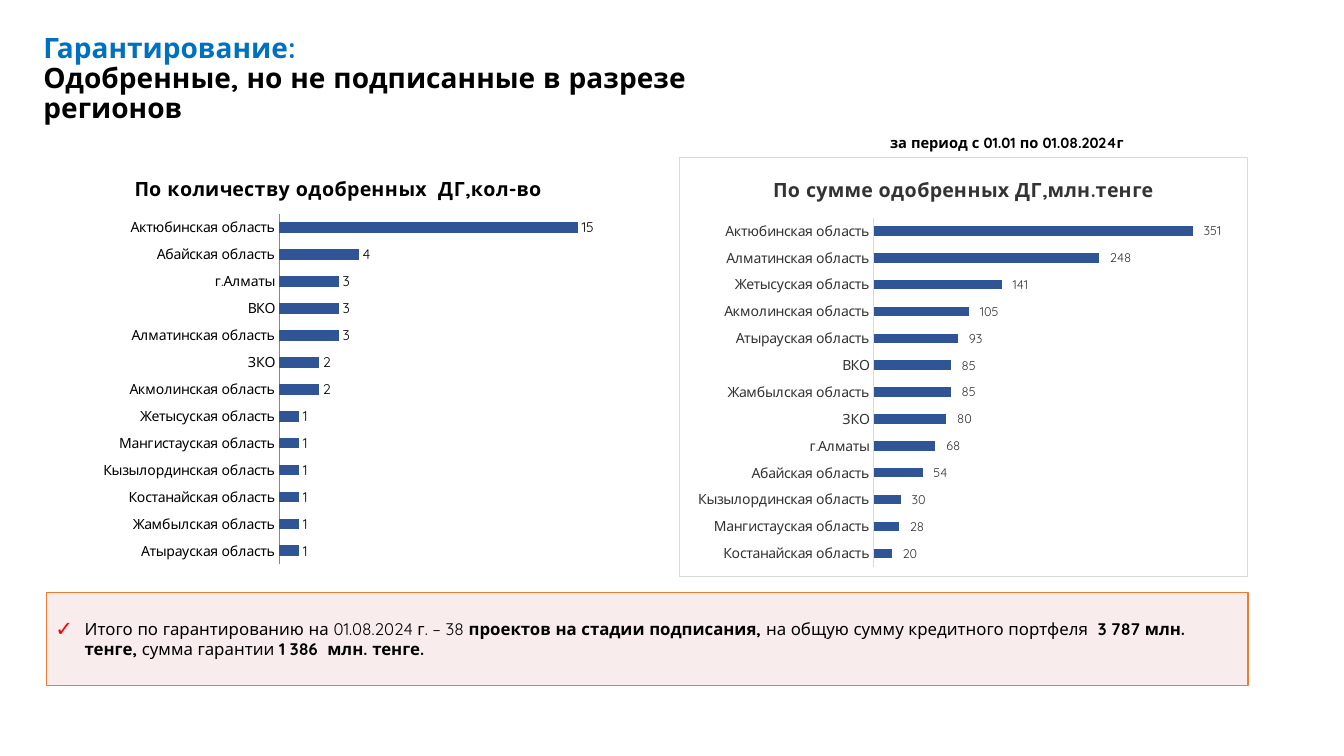
from lxml import etree
from pptx import Presentation
from pptx import util as u
from pptx.chart.data import CategoryChartData
from pptx.dml.color import RGBColor
from pptx.enum import chart as ch, text
from pptx.oxml import parse_xml
from pptx.oxml.ns import nsdecls, qn

WIDTH, HEIGHT = u.Inches(13.33), u.Inches(7.5)
FACE = "Quicksand"
BLACK = RGBColor(0, 0, 0)
BLUE = RGBColor(0x00, 0x70, 0xC0)
BAR = RGBColor(0x2F, 0x55, 0x97)
DARK = RGBColor(0x33, 0x33, 0x33)
GREY = RGBColor(0xD9, 0xD9, 0xD9)
AXIS_GREY = RGBColor(0x87, 0x87, 0x87)
ORANGE = RGBColor(0xED, 0x7D, 0x31)
PINK = RGBColor(0xF2, 0xDC, 0xDB)

REGIONS = {
    "Атырауская область": (1, 93),
    "Жамбылская область": (1, 85),
    "Костанайская область": (1, 20),
    "Кызылординская область": (1, 30),
    "Мангистауская область": (1, 28),
    "Жетысуская область": (1, 141),
    "Акмолинская область": (2, 105),
    "ЗКО": (2, 80),
    "Алматинская область": (3, 248),
    "ВКО": (3, 85),
    "г.Алматы": (3, 68),
    "Абайская область": (4, 54),
    "Актюбинская область": (15, 351),
}

COUNT_CHART = {
    "title": "По количеству одобренных  ДГ,кол-во", "left": 3.98, "measure": 0,
    "ink": BLACK, "axis": AXIS_GREY, "maximum": 16, "gap": 150, "label_size": 10,
    "format": "#,##0", "plot": (0.396, 0.136, 0.559, 0.835), "framed": False,
}
SUM_CHART = {
    "title": "По сумме одобренных ДГ,млн.тенге", "left": 50.49, "measure": 1,
    "ink": DARK, "axis": GREY, "maximum": 400, "gap": 182, "label_size": 9,
    "format": r'_-* #\ ##0_р_._-;\-* #\ ##0_р_._-;_-* "-"??_р_._-;_-@_-',
    "plot": (0.342, 0.143, 0.64, 0.835), "framed": True,
}


def share(left, top, width, height):
    """Turn percentages of the slide into a position and a size."""
    return [int(side * part / 100) for side, part in
            zip((WIDTH, HEIGHT, WIDTH, HEIGHT), (left, top, width, height))]


def place(part, box):
    """Move a placeholder to a box."""
    for name, value in zip(("left", "top", "width", "height"), box):
        setattr(part, name, value)


def set_all(target, **values):
    """Set every attribute given on the target."""
    for name, value in values.items():
        setattr(target, name, value)


def style(font, size, color, bold=False):
    """Set the face, size, weight and colour of a font."""
    set_all(font, name=FACE, size=u.Pt(size), bold=bold)
    font.color.rgb = color


def add_heading(slide):
    """Fill the title placeholder with the section and the topic."""
    heading = slide.shapes.title
    place(heading, share(2.48, 3.87, 59.04, 14.8))
    frame = heading.text_frame
    set_all(frame, word_wrap=True, auto_size=text.MSO_AUTO_SIZE.NONE,
            vertical_anchor=text.MSO_ANCHOR.TOP)
    topic = frame.paragraphs[0]
    set_all(topic, alignment=text.PP_ALIGN.LEFT, line_spacing=0.9, space_before=u.Pt(0))
    for words, color in (("Гарантирование: ", BLUE),
                         ("Одобренные, но не подписанные в разрезе регионов", BLACK)):
        if topic.runs:
            topic.add_line_break()
        run = topic.add_run()
        run.text = words
        style(run.font, 20, color, True)


def add_period(slide):
    """Add the reporting period above the right chart."""
    period = slide.shapes.add_textbox(*share(65.49, 17.07, 19.35, 3.73))
    period.text_frame.word_wrap = False
    run = period.text_frame.paragraphs[0].add_run()
    run.text = "за период с 01.01 по 01.08.2024г"
    style(run.font, 10.5, BLACK, True)


def add_frame(chart):
    """Give the chart area a white fill and a thin border."""
    area = parse_xml(
        f'<c:spPr {nsdecls("c", "a")}><a:solidFill><a:srgbClr val="FFFFFF"/></a:solidFill>'
        f'<a:ln w="9525"><a:solidFill><a:srgbClr val="{GREY}"/></a:solidFill></a:ln></c:spPr>')
    chart.element.find(qn("c:chart")).addnext(area)


def set_plot_area(chart, plot):
    """Fix the inner plot area as shares of the chart."""
    area = chart.element.find(".//" + qn("c:plotArea"))
    for old in area.findall(qn("c:layout")):
        area.remove(old)
    parts = [("layoutTarget", "inner"), ("xMode", "edge"), ("yMode", "edge")]
    parts += zip("xywh", plot)
    inner = "".join(f'<c:{tag} val="{value}"/>' for tag, value in parts)
    area.insert(0, parse_xml(f'<c:layout {nsdecls("c")}><c:manualLayout>{inner}'
                             '</c:manualLayout></c:layout>'))


def add_ranking(slide, look):
    """Add a bar chart of the regions ranked by one measure."""
    measure = look["measure"]
    ranked = sorted(REGIONS, key=lambda region: REGIONS[region][measure])
    data = CategoryChartData()
    data.categories = ranked
    data.add_series(look["title"], [REGIONS[region][measure] for region in ranked])
    chart = slide.shapes.add_chart(ch.XL_CHART_TYPE.BAR_CLUSTERED,
                                   *share(look["left"], 20.8, 42.39, 55.47), data).chart
    style(chart.font, 10, BLACK)
    chart.has_legend = False
    chart.has_title = True
    caption = chart.chart_title.text_frame
    caption.text = look["title"]
    style(caption.paragraphs[0].runs[0].font, 14, look["ink"], True)
    chart.chart_title.include_in_layout = False

    regions_axis, value_axis = chart.category_axis, chart.value_axis
    set_all(regions_axis, major_tick_mark=ch.XL_TICK_MARK.NONE, has_major_gridlines=False)
    style(regions_axis.tick_labels.font, 10, look["ink"])
    regions_axis.format.line.color.rgb = look["axis"]
    regions_axis.format.line.width = u.Pt(0.75)
    set_all(value_axis, visible=False, has_major_gridlines=False,
            minimum_scale=0, maximum_scale=look["maximum"])

    bars = chart.plots[0]
    set_all(bars, gap_width=look["gap"], vary_by_categories=False, has_data_labels=True)
    bars.series[0].format.fill.solid()
    bars.series[0].format.fill.fore_color.rgb = BAR
    set_all(bars.data_labels, show_value=True, number_format=look["format"],
            number_format_is_linked=False, position=ch.XL_LABEL_POSITION.OUTSIDE_END)
    style(bars.data_labels.font, look["label_size"], look["ink"])
    set_plot_area(chart, look["plot"])
    if look["framed"]:
        add_frame(chart)


def add_check_mark(paragraph):
    """Give the paragraph a hanging red check mark."""
    props = paragraph._p.get_or_add_pPr()
    props.set("marL", str(u.Inches(0.3)))
    props.set("indent", str(u.Inches(-0.29)))
    color = etree.SubElement(props, qn("a:buClr"))
    etree.SubElement(color, qn("a:srgbClr"), val="FF0000")
    etree.SubElement(props, qn("a:buSzPct"), val="125000")
    etree.SubElement(props, qn("a:buChar"), char="✓")


def add_summary(slide):
    """Turn the body placeholder into the framed summary."""
    summary = slide.placeholders[1]
    place(summary, share(3.45, 78.4, 89.42, 12.27))
    summary.fill.solid()
    summary.fill.fore_color.rgb = PINK
    tint = summary.fill._xPr.find(".//" + qn("a:srgbClr"))
    etree.SubElement(tint, qn("a:alpha"), val="50000")
    summary.line.color.rgb = ORANGE
    summary.line.width = u.Pt(1)
    frame = summary.text_frame
    set_all(frame, word_wrap=True, auto_size=text.MSO_AUTO_SIZE.NONE,
            vertical_anchor=text.MSO_ANCHOR.MIDDLE,
            margin_left=u.Inches(0.08), margin_right=u.Inches(0.08),
            margin_top=u.Inches(0.04), margin_bottom=u.Inches(0.04))
    total = frame.paragraphs[0]
    set_all(total, space_before=u.Pt(0), space_after=u.Pt(6), alignment=text.PP_ALIGN.LEFT)
    add_check_mark(total)
    for words, bold in (("Итого по гарантированию на 01.08.2024 г. – 38 ", False),
                        ("проектов на стадии подписания, ", True),
                        ("на общую сумму кредитного портфеля  ", False),
                        ("3 787 млн. тенге, ", True),
                        ("сумма гарантии", False),
                        (" 1 386  млн. тенге.", True)):
        run = total.add_run()
        run.text = words
        style(run.font, 12, BLACK, bold)


def main():
    """Build the slide and save it."""
    deck = Presentation()
    set_all(deck, slide_width=WIDTH, slide_height=HEIGHT)
    slide = deck.slides.add_slide(deck.slide_layouts[1])
    add_heading(slide)
    add_period(slide)
    add_summary(slide)
    for look in (COUNT_CHART, SUM_CHART):
        add_ranking(slide, look)
    deck.save("out.pptx")


if __name__ == "__main__":
    main()
